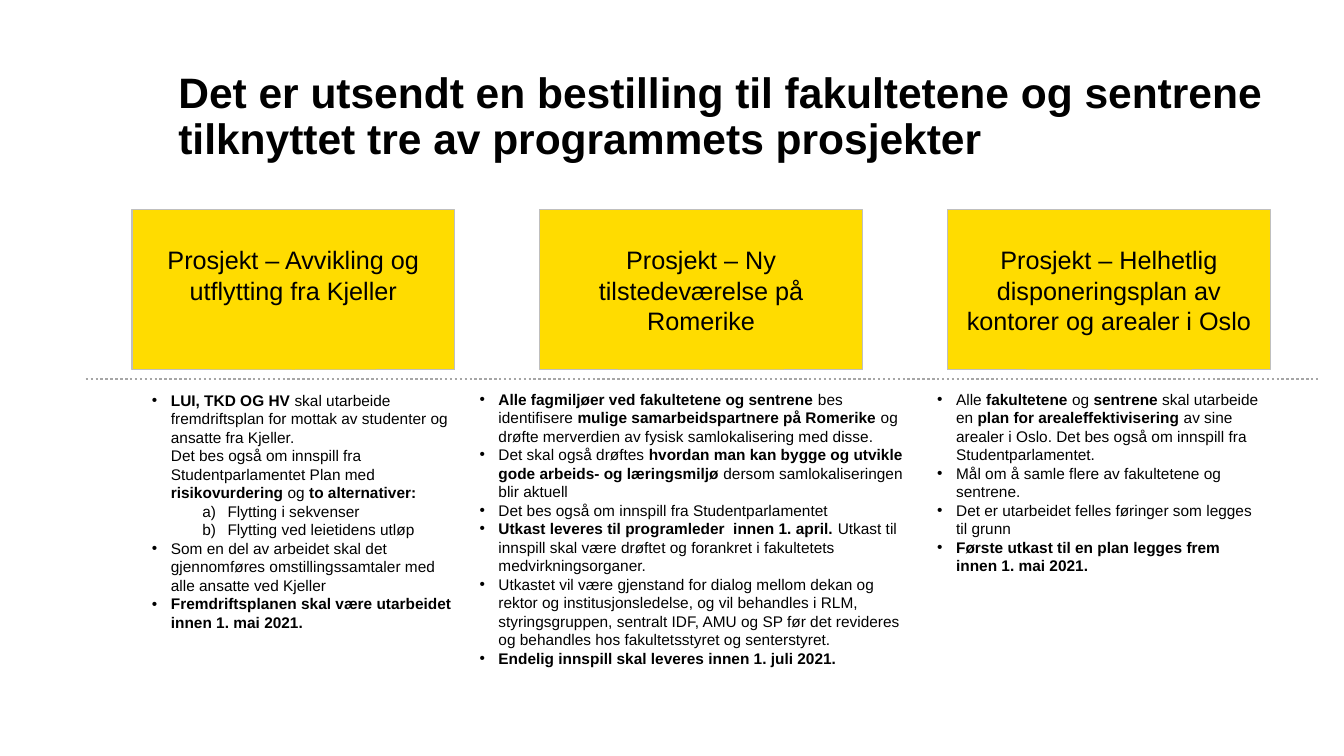
"""Builds a slide on the order sent out for three projects."""
from lxml.etree import SubElement
from pptx import Presentation
from pptx.dml.color import RGBColor
from pptx.enum.dml import MSO_LINE
from pptx.enum.shapes import MSO_CONNECTOR, MSO_SHAPE
from pptx.enum.text import MSO_ANCHOR, PP_ALIGN
from pptx.oxml.ns import qn
from pptx.util import Pt

FONT = "Arial"
BLACK, YELLOW, BORDER, DIVIDER = "000000", "FFDC00", "BFBFBF", "A6A6A6"

TITLE = ("Det er utsendt en bestilling til fakultetene og sentrene "
         "tilknyttet tre av programmets prosjekter")

# Asterisks enclose bold text, and level 1 items are lettered.
PROJECTS = [
    {"name": "Prosjekt – Avvikling og utflytting fra Kjeller",
     "left": 101.5, "top": 275.8, "width": 234.7, "height": 191.5,
     "items": [
         (0, "*LUI, TKD OG HV *skal utarbeide fremdriftsplan for mottak av studenter og "
             "ansatte fra Kjeller. \nDet bes også om innspill fra Studentparlamentet "
             "Plan med *risikovurdering* og *to alternativer:*"),
         (1, "Flytting i sekvenser"),
         (1, "Flytting ved leietidens utløp"),
         (0, "Som en del av arbeidet skal det gjennomføres omstillingssamtaler med "
             "alle ansatte ved Kjeller"),
         (0, "*Fremdriftsplanen skal være utarbeidet innen 1. mai 2021.*")]},
    {"name": "Prosjekt – Ny tilstedeværelse på Romerike",
     "left": 335.5, "top": 275, "width": 326.9, "height": 246.2,
     "items": [
         (0, "*Alle fagmiljøer ved fakultetene og sentrene *bes identifisere *mulige "
             "samarbeidspartnere på Romerike* og drøfte merverdien av fysisk "
             "samlokalisering med disse."),
         (0, "Det skal også drøftes *hvordan man kan bygge og utvikle gode arbeids- og "
             "læringsmiljø* dersom samlokaliseringen blir aktuell"),
         (0, "Det bes også om innspill fra Studentparlamentet"),
         (0, "*Utkast leveres til programleder  innen 1. april. *Utkast til innspill "
             "skal være drøftet og forankret i fakultetets medvirkningsorganer."),
         (0, "Utkastet vil være gjenstand for dialog mellom dekan og rektor og "
             "institusjonsledelse, og vil behandles i RLM, styringsgruppen, sentralt "
             "IDF, AMU og SP før det revideres og behandles hos fakultetsstyret og "
             "senterstyret."),
         (0, "*Endelig innspill skal leveres innen 1. juli 2021.*")]},
    {"name": "Prosjekt – Helhetlig disponeringsplan av kontorer og arealer i Oslo",
     "left": 662.4, "top": 275, "width": 244.8, "height": 140.4,
     "items": [
         (0, "Alle* fakultetene *og *sentrene* skal utarbeide en *plan for "
             "arealeffektivisering* av sine arealer i Oslo. Det bes også om innspill "
             "fra Studentparlamentet."),
         (0, "Mål om å samle flere av fakultetene og sentrene."),
         (0, "Det er utarbeidet felles føringer som legges til grunn"),
         (0, "*Første utkast til en plan legges frem\ninnen 1. mai 2021.*")]},
]

BULLETS = [
    {"margin": 13.5, "hanging": 13.5, "tag": "a:buChar", "attributes": {"char": "•"}},
    {"margin": 54, "hanging": 18, "tag": "a:buAutoNum",
     "attributes": {"type": "alphaLcParenR"}},
]

HEADER_LEFT, HEADER_TOP, HEADER_WIDTH, HEADER_HEIGHT = 94.3, 149.8, 230.4, 114.5
HEADER_STEP = 291.3
DIVIDER_Y = 270.7


def color(hex_code):
    return RGBColor.from_string(hex_code)


def add_run(paragraph, text, size, bold=False):
    run = paragraph.add_run()
    run.text = text
    font = run.font
    font.name, font.size, font.bold = FONT, Pt(size), bold
    font.color.rgb = color(BLACK)


def add_marked_text(paragraph, text, size):
    for part_index, part in enumerate(text.split("*")):
        for line_index, line in enumerate(part.split("\n")):
            if line_index:
                paragraph.add_line_break()
            if line:
                add_run(paragraph, line, size, bold=part_index % 2 == 1)


def set_bullet(paragraph, level):
    bullet = BULLETS[level]
    paragraph.level = level
    properties = paragraph._p.get_or_add_pPr()
    properties.set("marL", str(Pt(bullet["margin"])))
    properties.set("indent", str(-Pt(bullet["hanging"])))
    SubElement(properties, qn("a:buFont")).set("typeface", FONT)
    SubElement(properties, qn(bullet["tag"]), bullet["attributes"])


def add_title(slide):
    frame = slide.shapes.add_textbox(Pt(127.4), Pt(79.9), Pt(851), Pt(36.7)).text_frame
    frame.word_wrap = True
    frame.vertical_anchor = MSO_ANCHOR.BOTTOM
    frame.margin_left = frame.margin_right = frame.margin_top = frame.margin_bottom = 0
    paragraph = frame.paragraphs[0]
    paragraph.line_spacing = 0.9
    add_run(paragraph, TITLE, 30.4, bold=True)


def add_divider(slide):
    divider = slide.shapes.add_connector(
        MSO_CONNECTOR.STRAIGHT, Pt(61.2), Pt(DIVIDER_Y), Pt(942.5), Pt(DIVIDER_Y))
    divider.line.color.rgb = color(DIVIDER)
    divider.line.width = Pt(1.75)
    divider.line.dash_style = MSO_LINE.ROUND_DOT
    SubElement(divider._element.spPr, qn("a:effectLst"))


def add_details(slide, project):
    frame = slide.shapes.add_textbox(
        *(Pt(project[key]) for key in ("left", "top", "width", "height"))).text_frame
    frame.word_wrap = True
    for index, (level, text) in enumerate(project["items"]):
        paragraph = frame.add_paragraph() if index else frame.paragraphs[0]
        set_bullet(paragraph, level)
        add_marked_text(paragraph, text, 11)


def add_header(slide, column, name):
    header = slide.shapes.add_shape(
        MSO_SHAPE.RECTANGLE, Pt(HEADER_LEFT + column * HEADER_STEP), Pt(HEADER_TOP),
        Pt(HEADER_WIDTH), Pt(HEADER_HEIGHT))
    header.shadow.inherit = False
    header.fill.solid()
    header.fill.fore_color.rgb = color(YELLOW)
    header.line.color.rgb = color(BORDER)
    header.line.width = Pt(0.75)
    frame = header.text_frame
    frame.word_wrap = True
    frame.vertical_anchor = MSO_ANCHOR.TOP
    frame.margin_top = Pt(25)
    paragraph = frame.paragraphs[0]
    paragraph.alignment = PP_ALIGN.CENTER
    add_run(paragraph, name, 18)


def main():
    presentation = Presentation()
    presentation.slide_width, presentation.slide_height = Pt(960), Pt(540)
    slide = presentation.slides.add_slide(presentation.slide_layouts[6])
    add_title(slide)
    add_divider(slide)
    for column, project in enumerate(PROJECTS):
        add_details(slide, project)
        add_header(slide, column, project["name"])
    presentation.save("out.pptx")


if __name__ == "__main__":
    main()
